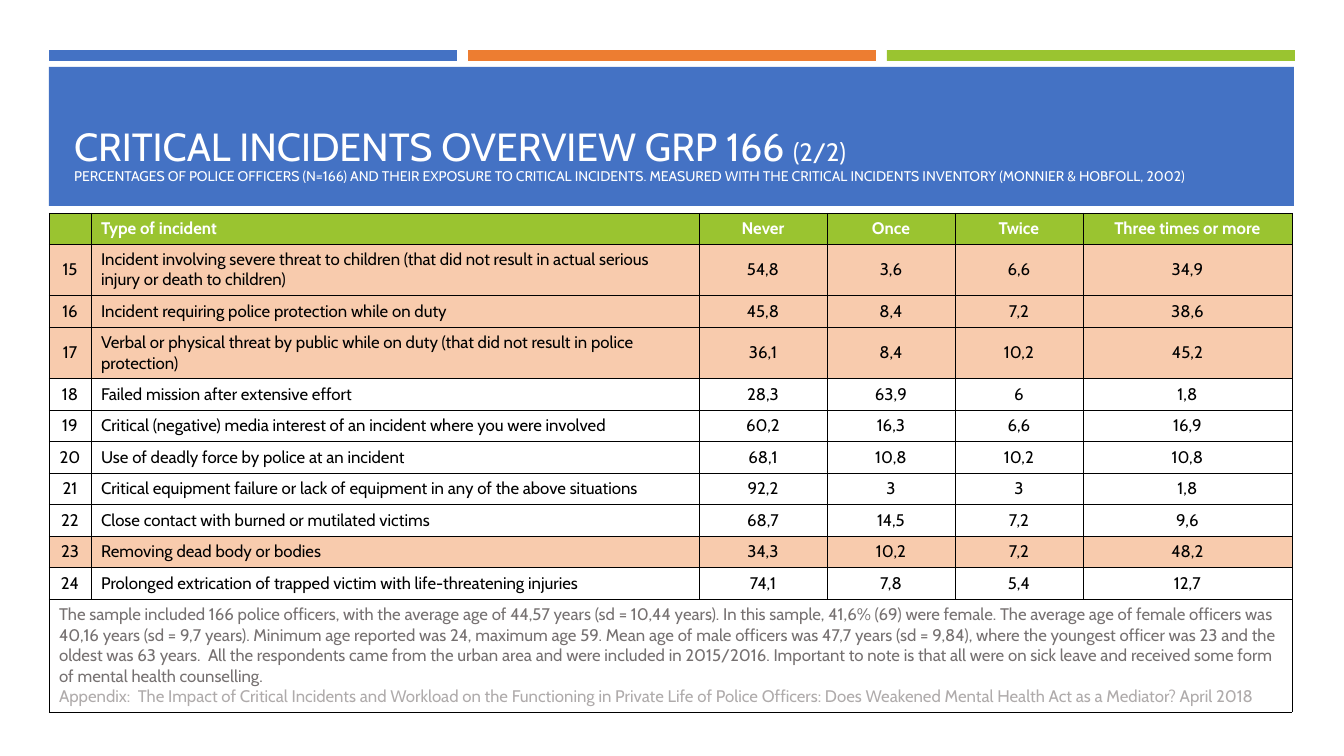
from dataclasses import dataclass

from lxml.etree import SubElement
from pptx import Presentation
from pptx.dml.color import RGBColor
from pptx.enum.shapes import MSO_SHAPE
from pptx.enum.text import MSO_ANCHOR, MSO_AUTO_SIZE, PP_ALIGN
from pptx.oxml.ns import qn
from pptx.util import Pt

# Content
HEADING = "CRITICAL INCIDENTS OVERVIEW GRP 166 "
PART = "(2/2)"
SUBHEADING = (
    "PERCENTAGES OF POLICE OFFICERS (N=166) AND THEIR EXPOSURE TO CRITICAL INCIDENTS. "
    "MEASURED WITH THE CRITICAL INCIDENTS INVENTORY (MONNIER & HOBFOLL, 2002)"
)
COLUMN_HEADS = ("", "Type of incident", "Never", "Once", "Twice", "Three times or more")
INCIDENTS = [
    ("15", "Incident involving severe threat to children (that did not result in "
     "actual serious injury or death to children)", "54,8", "3,6", "6,6", "34,9"),
    ("16", "Incident requiring police protection while on duty", "45,8", "8,4", "7,2", "38,6"),
    ("17", "Verbal or physical threat by public while on duty (that did not result in "
     "police protection)", "36,1", "8,4", "10,2", "45,2"),
    ("18", "Failed mission after extensive effort", "28,3", "63,9", "6", "1,8"),
    ("19", "Critical (negative) media interest of an incident where you were involved",
     "60,2", "16,3", "6,6", "16,9"),
    ("20", "Use of deadly force by police at an incident", "68,1", "10,8", "10,2", "10,8"),
    ("21", "Critical equipment failure or lack of equipment in any of the above situations",
     "92,2", "3", "3", "1,8"),
    ("22", "Close contact with burned or mutilated victims", "68,7", "14,5", "7,2", "9,6"),
    ("23", "Removing dead body or bodies", "34,3", "10,2", "7,2", "48,2"),
    ("24", "Prolonged extrication of trapped victim with life-threatening injuries",
     "74,1", "7,8", "5,4", "12,7"),
]
FREQUENT = {"15", "16", "17", "23"}
SAMPLE_NOTE = (
    "The sample included 166 police officers, with the average age of 44,57 years "
    "(sd = 10,44 years). In this sample, 41,6% (69) were female. The average age of female "
    "officers was 40,16 years (sd = 9,7 years). Minimum age reported was 24, maximum age 59. "
    "Mean age of male officers was 47,7 years (sd = 9,84), where the youngest officer was 23 "
    "and the oldest was 63 years.  All the respondents came from the urban area and were "
    "included in 2015/2016. Important to note is that all were on sick leave and received "
    "some form of mental health counselling."
)
APPENDIX = (
    "Appendix:  The Impact of Critical Incidents and Workload on the Functioning in Private "
    "Life of Police Officers: Does Weakened Mental Health Act as a Mediator? April 2018"
)


@dataclass(frozen=True)
class Theme:
    font: str = "Cabin"
    blue: str = "4472C4"
    orange: str = "ED7D31"
    green: str = "9AC430"
    peach: str = "F8CBAD"
    white: str = "FFFFFF"
    black: str = "000000"
    note: str = "767171"
    appendix: str = "AFABAB"
    heading_size: int = 28
    part_size: int = 18
    subheading_size: int = 10
    table_size: int = 12
    border: float = 0.25


THEME = Theme()

# Layout in px
SLIDE = (1344, 756)
BAR_LEFT, BAR_TOP, BAR_WIDTH, BAR_HEIGHT, BAR_STEP = 49, 50, 408, 11, 419
BANNER = (49, 67, 1245, 139)
TITLE = (64, 81, 1215, 109)
TABLE_LEFT, TABLE_TOP = 49, 213
COLUMN_WIDTHS = (42, 608, 128, 128, 128, 209)
ROW_HEIGHTS = (31, 51, 32, 51, 32, 31, 32, 31, 32, 31, 32, 113)


def px(length):
    return round(length * 914400 / 100.8)


def set_all(target, formats):
    for name, value in formats.items():
        setattr(target, name, value)


def paint(fill, color):
    fill.solid()
    fill.fore_color.rgb = RGBColor.from_string(color)


def add_text(paragraph, text, size, color, bold=False):
    run = paragraph.add_run()
    run.text = text
    set_all(run.font, {"name": THEME.font, "size": Pt(size), "bold": bold})
    run.font.color.rgb = RGBColor.from_string(color)


def add_block(box, color):
    block = slide.shapes.add_shape(MSO_SHAPE.RECTANGLE, *map(px, box))
    block.shadow.inherit = False
    paint(block.fill, color)
    block.line.fill.background()


def style_cell(cell, color):
    cell.vertical_anchor = MSO_ANCHOR.MIDDLE
    properties = cell._tc.get_or_add_tcPr()
    for side in ("a:lnL", "a:lnR", "a:lnT", "a:lnB"):
        edge = SubElement(properties, qn(side), w=str(Pt(THEME.border)))
        SubElement(SubElement(edge, qn("a:solidFill")), qn("a:srgbClr"), val=THEME.black)
    paint(cell.fill, color)


presentation = Presentation()
set_all(presentation, {"slide_width": px(SLIDE[0]), "slide_height": px(SLIDE[1])})
slide = presentation.slides.add_slide(presentation.slide_layouts.get_by_name("Title Only"))

# Colour bars and banner
for index, color in enumerate((THEME.blue, THEME.orange, THEME.green)):
    add_block((BAR_LEFT + index * BAR_STEP, BAR_TOP, BAR_WIDTH, BAR_HEIGHT), color)
add_block(BANNER, THEME.blue)

# Title, brought in front of the banner
title = slide.shapes.title
slide.shapes._spTree.append(title._element)
set_all(title, dict(zip(("left", "top", "width", "height"), map(px, TITLE))))
set_all(title.text_frame, {
    "vertical_anchor": MSO_ANCHOR.BOTTOM, "word_wrap": True, "auto_size": MSO_AUTO_SIZE.NONE,
})
heading = title.text_frame.paragraphs[0]
set_all(heading, {"alignment": PP_ALIGN.LEFT, "line_spacing": 0.9})
add_text(heading, HEADING, THEME.heading_size, THEME.white)
add_text(heading, PART, THEME.part_size, THEME.white)
heading.add_line_break()
add_text(heading, SUBHEADING, THEME.subheading_size, THEME.white)

# Incident table
table = slide.shapes.add_table(
    len(ROW_HEIGHTS), len(COLUMN_WIDTHS), px(TABLE_LEFT), px(TABLE_TOP),
    px(sum(COLUMN_WIDTHS)), px(sum(ROW_HEIGHTS)),
).table
for column, width in zip(table.columns, COLUMN_WIDTHS):
    column.width = px(width)
for row, height in zip(table.rows, ROW_HEIGHTS):
    row.height = px(height)

for row_index, values in enumerate([COLUMN_HEADS, *INCIDENTS]):
    is_head = row_index == 0
    usual_fill = THEME.peach if values[0] in FREQUENT else THEME.white
    for column_index, value in enumerate(values):
        cell = table.cell(row_index, column_index)
        style_cell(cell, THEME.green if is_head else usual_fill)
        entry = cell.text_frame.paragraphs[0]
        entry.alignment = PP_ALIGN.LEFT if column_index == 1 else PP_ALIGN.CENTER
        if value:
            add_text(entry, value, THEME.table_size,
                     THEME.white if is_head else THEME.black, is_head)
        else:
            SubElement(entry._p, qn("a:endParaRPr"), sz=str(THEME.table_size * 100))

# Notes across the last row
last_row = len(ROW_HEIGHTS) - 1
for column_index in range(len(COLUMN_WIDTHS)):
    style_cell(table.cell(last_row, column_index), THEME.white)
notes = table.cell(last_row, 0)
notes.merge(table.cell(last_row, len(COLUMN_WIDTHS) - 1))
add_text(notes.text_frame.paragraphs[0], SAMPLE_NOTE, THEME.table_size, THEME.note)
add_text(notes.text_frame.add_paragraph(), APPENDIX, THEME.table_size, THEME.appendix)

presentation.save("out.pptx")
